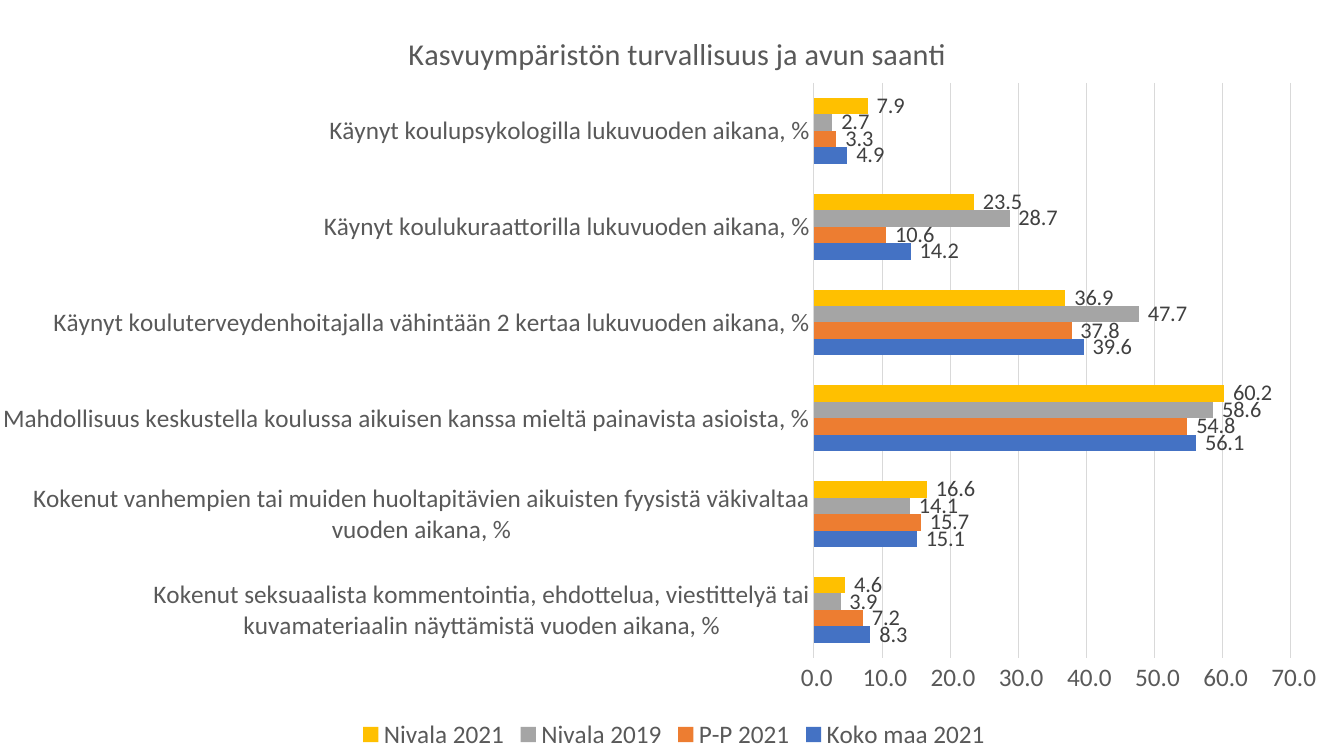
"""Build a slide with a clustered bar chart on school safety and support."""
from lxml import etree
from pptx import Presentation
from pptx.chart.data import CategoryChartData
from pptx.dml.color import RGBColor
from pptx.enum.chart import XL_CHART_TYPE, XL_LABEL_POSITION, XL_LEGEND_POSITION, XL_TICK_MARK
from pptx.oxml.ns import qn
from pptx.util import Pt

BAR_CLUSTERED = XL_CHART_TYPE.BAR_CLUSTERED
OUTSIDE_END = XL_LABEL_POSITION.OUTSIDE_END
LEGEND_BOTTOM = XL_LEGEND_POSITION.BOTTOM
NO_TICK = XL_TICK_MARK.NONE

TITLE = "Kasvuympäristön turvallisuus ja avun saanti"
CATEGORIES = [
    "Kokenut seksuaalista kommentointia, ehdottelua, viestittelyä tai "
    "kuvamateriaalin näyttämistä vuoden aikana, %",
    "Kokenut vanhempien tai muiden huoltapitävien aikuisten fyysistä väkivaltaa vuoden aikana, %",
    "Mahdollisuus keskustella koulussa aikuisen kanssa mieltä painavista asioista, %",
    "Käynyt kouluterveydenhoitajalla vähintään 2 kertaa lukuvuoden aikana, %",
    "Käynyt koulukuraattorilla lukuvuoden aikana, %",
    "Käynyt koulupsykologilla lukuvuoden aikana, %",
]
SERIES = [
    ("Koko maa 2021", "4472C4", (8.3, 15.1, 56.1, 39.6, 14.2, 4.9)),
    ("P-P 2021", "ED7D31", (7.2, 15.7, 54.8, 37.8, 10.6, 3.3)),
    ("Nivala 2019", "A5A5A5", (3.9, 14.1, 58.6, 47.7, 28.7, 2.7)),
    ("Nivala 2021", "FFC000", (4.6, 16.6, 60.2, 36.9, 23.5, 7.9)),
]
NUMBER_FORMAT = "#\\ ##0.0"
FONT = "Calibri"
TEXT, LABEL, RULE = "595959", "404040", "D9D9D9"

EMU_PER_PX = 9071
WIDTH, HEIGHT = 1344, 756
PLOT_BOX = {"x": 814, "y": 83, "w": 477, "h": 575}
TITLE_SPOT = {"x": 403, "y": 27}
LEGEND_SPOT = {"x": 355, "y": 721}


def px(length):
    return length * EMU_PER_PX


def color(value):
    return RGBColor.from_string(value)


def style_font(font, size, value=TEXT):
    font.name = FONT
    font.size = Pt(size)
    font.bold = False
    font.color.rgb = color(value)


def style_line(line):
    line.color.rgb = color(RULE)
    line.width = Pt(0.75)


def place(element, index, box, inner=False):
    for old in element.findall(qn("c:layout")):
        element.remove(old)
    layout = etree.Element(qn("c:layout"))
    manual = etree.SubElement(layout, qn("c:manualLayout"))
    settings = [("layoutTarget", "inner")] if inner else []
    settings += [(f"{side}Mode", "edge") for side in "xy"]
    settings += [
        (side, f"{length / (WIDTH if side in 'xw' else HEIGHT):.4f}")
        for side, length in box.items()
    ]
    for name, value in settings:
        etree.SubElement(manual, qn(f"c:{name}")).set("val", value)
    element.insert(index, layout)


def add_bar_chart(slide):
    data = CategoryChartData(number_format=NUMBER_FORMAT)
    data.categories = CATEGORIES
    for name, _, values in SERIES:
        data.add_series(name, values)
    frame = slide.shapes.add_chart(BAR_CLUSTERED, 0, 0, px(WIDTH), px(HEIGHT), data)
    return frame.chart


def style_series(plot):
    plot.gap_width = 182
    plot.overlap = 0
    plot.vary_by_categories = False
    for series, (_, fill, _) in zip(plot.series, SERIES):
        series.format.fill.solid()
        series.format.fill.fore_color.rgb = color(fill)
        labels = series.data_labels
        labels.show_value = True
        labels.position = OUTSIDE_END
        labels.number_format = NUMBER_FORMAT
        labels.number_format_is_linked = False
        style_font(labels.font, 16, LABEL)


def style_axes(chart):
    for axis in (chart.category_axis, chart.value_axis):
        axis.major_tick_mark = axis.minor_tick_mark = NO_TICK
        style_font(axis.tick_labels.font, 18)
    style_line(chart.category_axis.format.line)
    values = chart.value_axis
    values.minimum_scale, values.maximum_scale, values.major_unit = 0, 70, 10
    values.format.line.fill.background()
    values.tick_labels.number_format = NUMBER_FORMAT
    values.tick_labels.number_format_is_linked = False
    style_line(values.major_gridlines.format.line)


def style_title_and_legend(chart):
    chart.has_title = True
    text_frame = chart.chart_title.text_frame
    text_frame.text = TITLE
    style_font(text_frame.paragraphs[0].runs[0].font, 21.6)
    chart.has_legend = True
    chart.legend.position = LEGEND_BOTTOM
    chart.legend.include_in_layout = False
    style_font(chart.legend.font, 18)


def main():
    presentation = Presentation()
    presentation.slide_width, presentation.slide_height = px(WIDTH), px(HEIGHT)
    slide = presentation.slides.add_slide(presentation.slide_layouts[6])
    chart = add_bar_chart(slide)
    style_font(chart.font, 18, "000000")
    style_series(chart.plots[0])
    style_axes(chart)
    style_title_and_legend(chart)
    root = chart.element
    place(root.find(".//" + qn("c:plotArea")), 0, PLOT_BOX, inner=True)
    place(root.find(".//" + qn("c:title")), 1, TITLE_SPOT)
    place(root.find(".//" + qn("c:legend")), 1, LEGEND_SPOT)
    presentation.save("out.pptx")


if __name__ == "__main__":
    main()
